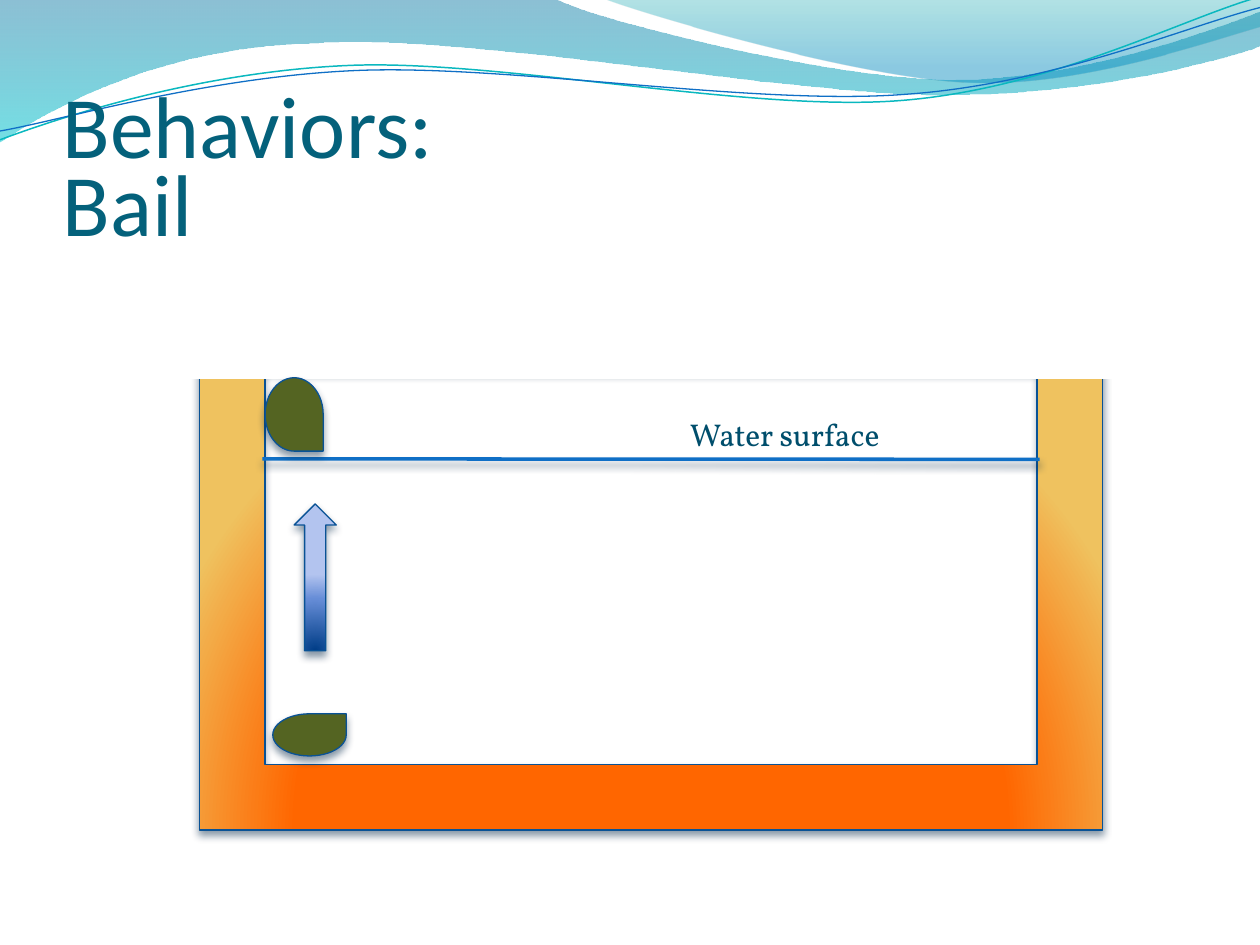
from lxml import etree
from pptx import Presentation
from pptx.dml.color import RGBColor
from pptx.enum.shapes import MSO_CONNECTOR, MSO_SHAPE
from pptx.enum.text import MSO_ANCHOR
from pptx.oxml import parse_xml
from pptx.oxml.ns import qn
from pptx.util import Cm, Pt

HUES = {
    "white": "FFFFFF", "title": "04617B", "label": "004E6C",
    "edge": "095295", "water": "0F6FC6", "teal": "0AB8BF",
    "deep": "0074A1", "cyan": "00C6CF", "sea": "00A1A9", "sky": "008BBF",
    "fire": "FF6600", "sand": "EFC25F", "moss": "546422",
    "navy": "003D87", "blue": "668DD7", "pale": "B3C4EF", "shade": "042747",
}
INCH = Cm(2.54)
NS = "http://schemas.openxmlformats.org/drawingml/2006/main"
DOWN = '<a:lin ang="5400000" scaled="0"/>'
GLOW = ('<a:path path="circle">'
        '<a:fillToRect l="50000" t="130000" r="50000" b="-30000"/></a:path>')

BAND = [(0, 0), (4.4, -0.01),
        (4.76, 0.17, 6.64, 0.63, 7.58, 0.63),
        (8.53, 0.63, 9.58, 0.26, 10, 0.09), (10.01, 0.36),
        (9.83, 0.44, 8.7, 0.76, 7.46, 0.75),
        (6.22, 0.75, 3.82, 0.28, 2.57, 0.34),
        (1.29, 0.36, 0.46, 0.83, -0.01, 1.13)]
CREST = [(4.79, -0.01), (5.09, 0.11, 6.82, 0.62, 7.69, 0.65),
         (8.56, 0.69, 9.61, 0.32, 10, 0.21), (10, 0)]
UPPER = [(0, 1.11), (0.48, 0.93, 1.58, 0.57, 2.77, 0.52),
         (3.95, 0.47, 5.93, 0.89, 7.13, 0.8),
         (8.33, 0.71, 9.38, 0.15, 9.98, -0.02)]
LOWER = [(0, 1.04), (0.47, 0.96, 1.64, 0.61, 2.83, 0.56),
         (4.03, 0.51, 5.97, 0.84, 7.17, 0.75),
         (8.36, 0.67, 9.41, 0.21, 10, 0.06)]


def tint(name):
    return RGBColor.from_string(HUES[name])


def blend(shape, stops, mode):
    marks = "".join(
        f'<a:gs pos="{pos * 1000}"><a:srgbClr val="{HUES[name]}">'
        f'<a:alpha val="{alpha * 1000}"/></a:srgbClr></a:gs>'
        for pos, name, alpha in stops)
    shape.fill.solid()
    old = shape._element.spPr.find(qn("a:solidFill"))
    new = parse_xml(f'<a:gradFill xmlns:a="{NS}" rotWithShape="1">'
                    f'<a:gsLst>{marks}</a:gsLst>{mode}</a:gradFill>')
    old.getparent().replace(old, new)


def shade(effects):
    effects.append(parse_xml(
        f'<a:outerShdw xmlns:a="{NS}" blurRad="{Pt(4.5)}" dist="{Pt(3)}" '
        f'dir="5400000" rotWithShape="0"><a:srgbClr val="{HUES["shade"]}">'
        '<a:alpha val="48000"/></a:srgbClr></a:outerShdw>'))


def paint(shape, fill=None, mode=DOWN, line=None, width=0.75, cast=False):
    shape.shadow.inherit = False
    if isinstance(fill, list):
        blend(shape, fill, mode)
    elif fill:
        shape.fill.solid()
        shape.fill.fore_color.rgb = tint(fill)
    else:
        shape.fill.background()
    if line:
        shape.line.color.rgb = tint(line)
        shape.line.width = Pt(width)
    else:
        shape.line.fill.background()
    if cast:
        shade(shape._element.spPr.find(qn("a:effectLst")))


def bend(shape, parts):
    legs = list(shape._element.spPr.iter(qn("a:lnTo")))
    for leg, part in zip(legs, parts):
        if len(part) == 2:
            continue
        curve = etree.Element(qn("a:cubicBezTo"))
        for x, y in zip(part[::2], part[1::2]):
            etree.SubElement(curve, qn("a:pt"),
                             x=str(round(x * INCH) - shape.left),
                             y=str(round(y * INCH) - shape.top))
        leg.getparent().replace(leg, curve)


def add_wave(slide, parts, close=False, **style):
    first, *rest = [(p[-2] * INCH, p[-1] * INCH) for p in parts]
    pen = slide.shapes.build_freeform(*first)
    pen.add_line_segments(rest, close=close)
    shape = pen.convert_to_shape()
    bend(shape, parts[1:])
    paint(shape, **style)


def add_form(slide, kind, box, turn=0, **style):
    shape = slide.shapes.add_shape(kind, *map(Cm, box))
    shape.rotation = turn
    paint(shape, **style)


def add_text(slide, text, box, size=50, font="Calibri", hue="title",
             anchor=MSO_ANCHOR.BOTTOM, inset=(0, 0.13, 0, 0)):
    frame = slide.shapes.add_textbox(*map(Cm, box)).text_frame
    frame.word_wrap = True
    frame.vertical_anchor = anchor
    (frame.margin_left, frame.margin_top,
     frame.margin_right, frame.margin_bottom) = map(Cm, inset)
    run = frame.paragraphs[0].add_run()
    run.text = text
    run.font.size = Pt(size)
    run.font.name = font
    run.font.color.rgb = tint(hue)


def add_line(slide, ends, hue, width):
    line = slide.shapes.add_connector(MSO_CONNECTOR.STRAIGHT, *map(Cm, ends))
    line.line.color.rgb = tint(hue)
    line.line.width = Pt(width)
    shade(etree.SubElement(line._element.spPr, qn("a:effectLst")))


def main():
    deck = Presentation()
    deck.slide_width, deck.slide_height = Cm(25.4), Cm(19.05)
    slide = deck.slides.add_slide(deck.slide_layouts[6])

    add_wave(slide, BAND, close=True,
             fill=[(0, "deep", 45), (100, "cyan", 55)])
    add_wave(slide, CREST, close=True,
             fill=[(0, "sea", 30), (80, "sky", 45)])
    add_wave(slide, UPPER, line="teal", width=0.85)
    add_wave(slide, LOWER, line="water")

    add_form(slide, MSO_SHAPE.FRAME, (4.02, 6.14, 18.21, 10.59),
             fill=[(0, "fire", 100), (68, "fire", 100), (100, "sand", 100)],
             mode=GLOW, line="edge", cast=True)
    add_form(slide, MSO_SHAPE.RECTANGLE, (3.18, 3.23, 20.11, 4.39),
             fill="white", line="white")
    add_text(slide, "Bail", (1.27, 1.95, 22.86, 3.18))
    add_form(slide, MSO_SHAPE.UP_ARROW, (5.93, 10.16, 0.85, 2.96),
             fill=[(0, "navy", 100), (68, "blue", 100), (100, "pale", 100)],
             mode=GLOW, line="edge", cast=True)
    add_form(slide, MSO_SHAPE.TEAR, (5.5, 14.39, 1.48, 0.85),
             fill="moss", line="edge", cast=True)
    add_line(slide, (5.29, 9.25, 20.96, 9.26), "water", 2)
    add_form(slide, MSO_SHAPE.TEAR, (5.19, 7.77, 1.48, 1.17), turn=90,
             fill="moss", line="edge", cast=True)
    add_text(slide, "Water surface", (13.66, 8.23, 7.19, 1.02), size=18,
             font="Vollkorn", hue="label", anchor=MSO_ANCHOR.TOP,
             inset=(0.25, 0.13, 0.25, 0.13))
    add_text(slide, "Behaviors:", (1.27, 0.36, 22.86, 3.18))

    deck.save("out.pptx")


if __name__ == "__main__":
    main()
